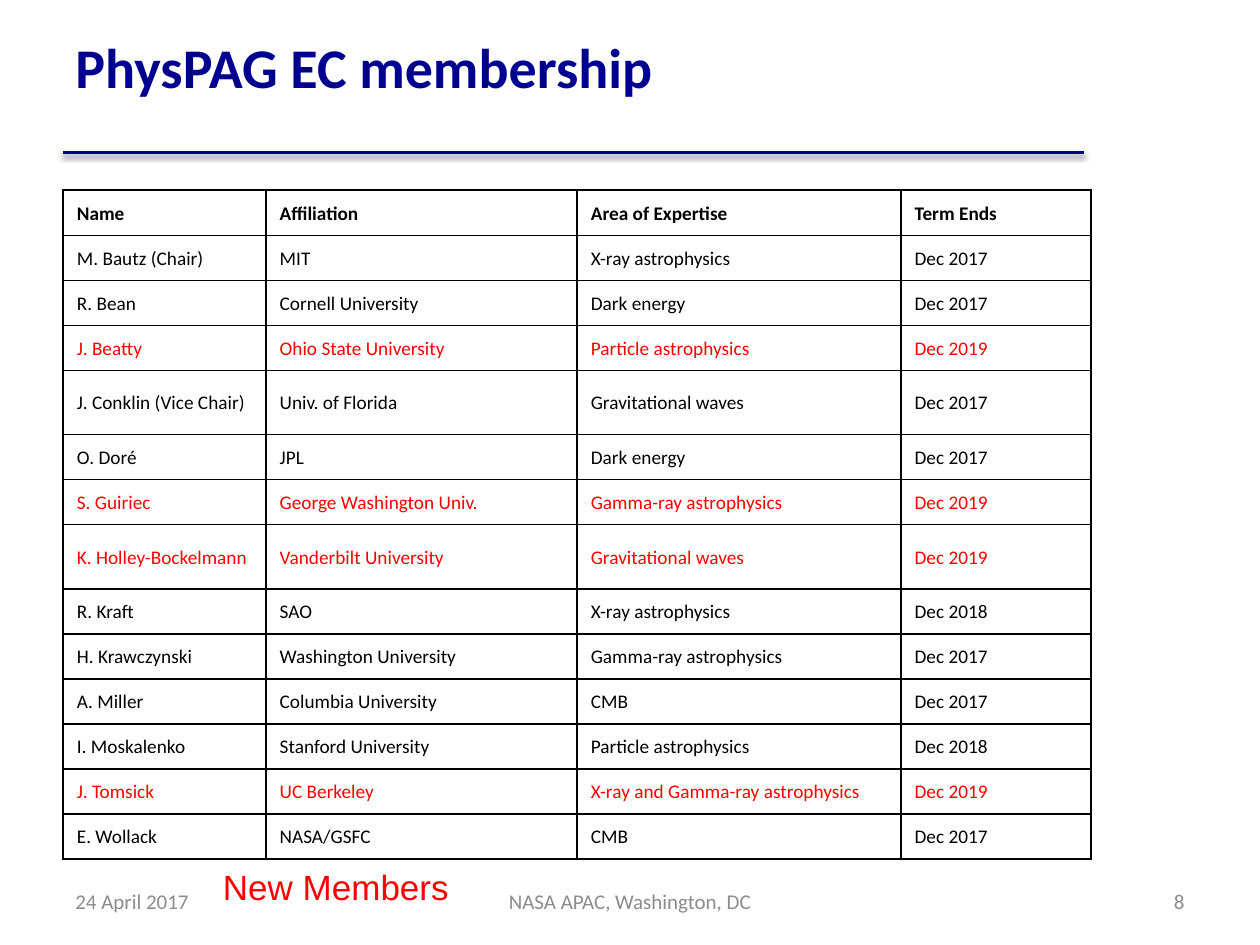
import lxml.etree
import pptx
import pptx.dml.color
import pptx.enum.shapes
import pptx.enum.text
import pptx.oxml
import pptx.oxml.ns
import pptx.util

Inches = pptx.util.Inches
Pt = pptx.util.Pt
RGBColor = pptx.dml.color.RGBColor
Align = pptx.enum.text.PP_ALIGN
Anchor = pptx.enum.text.MSO_ANCHOR

NAVY = RGBColor(0x00, 0x00, 0x90)
BLACK = RGBColor(0x00, 0x00, 0x00)
RED = RGBColor(0xFF, 0x00, 0x00)
GRAY = RGBColor(0x8C, 0x8C, 0x8C)

SLIDE_WIDTH = 10
SLIDE_HEIGHT = 7.5
MARGIN = SLIDE_WIDTH * 0.05
TABLE_TOP = 1.51
TABLE_HEIGHT = 5.31
COLUMN_WIDTHS = [1.61, 2.47, 2.57, 1.51]
TALL_ROW = 0.51
TALL_NAMES = ["J. Conklin (Vice Chair)", "K. Holley-Bockelmann"]
NEW_MEMBER_TERM = "Dec 2019"
FOOTER_TOP = 6.95
FOOTER_HEIGHT = 0.4
DRAWING = pptx.oxml.ns.nsdecls("a")

HEADER = ("Name", "Affiliation", "Area of Expertise", "Term Ends")
MEMBERS = [
    ("M. Bautz (Chair)", "MIT", "X-ray astrophysics", "Dec 2017"),
    ("R. Bean", "Cornell University", "Dark energy", "Dec 2017"),
    ("J. Beatty", "Ohio State University", "Particle astrophysics", "Dec 2019"),
    ("J. Conklin (Vice Chair)", "Univ. of Florida", "Gravitational waves", "Dec 2017"),
    ("O. Doré", "JPL", "Dark energy", "Dec 2017"),
    ("S. Guiriec", "George Washington Univ.", "Gamma-ray astrophysics", "Dec 2019"),
    ("K. Holley-Bockelmann", "Vanderbilt University", "Gravitational waves", "Dec 2019"),
    ("R. Kraft", "SAO", "X-ray astrophysics", "Dec 2018"),
    ("H. Krawczynski", "Washington University", "Gamma-ray astrophysics", "Dec 2017"),
    ("A. Miller", "Columbia University", "CMB", "Dec 2017"),
    ("I. Moskalenko", "Stanford University", "Particle astrophysics", "Dec 2018"),
    ("J. Tomsick", "UC Berkeley", "X-ray and Gamma-ray astrophysics", "Dec 2019"),
    ("E. Wollack", "NASA/GSFC", "CMB", "Dec 2017"),
]


def write_text(text_frame, text, size=12, color=BLACK, bold=False,
               font_name="Calibri", align=Align.LEFT):
    paragraph = text_frame.paragraphs[0]
    paragraph.alignment = align
    run = paragraph.add_run()
    run.text = text
    run.font.name = font_name
    run.font.size = Pt(size)
    run.font.bold = bold
    run.font.color.rgb = color
    return paragraph


def add_text_box(slide, box, text, anchor=Anchor.MIDDLE, wrap=True, **text_format):
    shape = slide.shapes.add_textbox(*map(Inches, box))
    shape.text_frame.word_wrap = wrap
    shape.text_frame.vertical_anchor = anchor
    write_text(shape.text_frame, text, **text_format)


def add_title_rule(slide, top, width):
    rule = slide.shapes.add_connector(
        pptx.enum.shapes.MSO_CONNECTOR.STRAIGHT,
        Inches(MARGIN), Inches(top), Inches(MARGIN + width), Inches(top))
    rule.line.color.rgb = NAVY
    rule.line.width = Pt(2)
    rule._element.spPr.append(pptx.oxml.parse_xml(
        f'<a:effectLst {DRAWING}><a:outerShdw blurRad="{Pt(3.1)}" '
        f'dist="{Pt(1.6)}" dir="5400000" rotWithShape="0">'
        '<a:srgbClr val="000000"><a:alpha val="38000"/></a:srgbClr>'
        '</a:outerShdw></a:effectLst>'))


def add_cell_borders(cell):
    properties = cell._tc.get_or_add_tcPr()
    for side in ("lnL", "lnR", "lnT", "lnB"):
        properties.append(pptx.oxml.parse_xml(
            f'<a:{side} {DRAWING} w="{Pt(1)}"><a:solidFill>'
            f'<a:srgbClr val="{BLACK}"/></a:solidFill></a:{side}>'))


def fill_cell(cell, text, **text_format):
    add_cell_borders(cell)
    cell.fill.background()
    cell.vertical_anchor = Anchor.MIDDLE
    cell.margin_left = cell.margin_right = cell.margin_top = Inches(0.01)
    cell.margin_bottom = 0
    paragraph = write_text(cell.text_frame, text, size=11, **text_format)
    paragraph._p.get_or_add_pPr().set("marL", str(Inches(0.1)))


def add_member_table(slide):
    rows = [HEADER, *MEMBERS]
    normal_row = (TABLE_HEIGHT - TALL_ROW * len(TALL_NAMES)) / (len(rows) - len(TALL_NAMES))
    table = slide.shapes.add_table(
        len(rows), len(COLUMN_WIDTHS), Inches(MARGIN), Inches(TABLE_TOP),
        Inches(sum(COLUMN_WIDTHS)), Inches(TABLE_HEIGHT)).table
    table.first_row = False
    table.horz_banding = False
    for column, width in zip(table.columns, COLUMN_WIDTHS):
        column.width = Inches(width)
    for row, values in zip(table.rows, rows):
        row.height = Inches(TALL_ROW if values[0] in TALL_NAMES else normal_row)
        color = RED if values[-1] == NEW_MEMBER_TERM else BLACK
        for cell, value in zip(row.cells, values):
            fill_cell(cell, value, color=color, bold=values is HEADER)


def add_footer(slide):
    side_width = SLIDE_WIDTH * 0.233
    center_width = SLIDE_WIDTH * 0.317
    footer_parts = [
        (MARGIN, side_width, "24 April 2017", Align.LEFT),
        ((SLIDE_WIDTH - center_width) / 2, center_width,
         "NASA APAC, Washington, DC", Align.CENTER),
        (SLIDE_WIDTH - MARGIN - side_width, side_width, "8", Align.RIGHT),
    ]
    for left, width, text, align in footer_parts:
        add_text_box(slide, (left, FOOTER_TOP, width, FOOTER_HEIGHT), text,
                     color=GRAY, align=align)


def main():
    presentation = pptx.Presentation()
    presentation.slide_width = Inches(SLIDE_WIDTH)
    presentation.slide_height = Inches(SLIDE_HEIGHT)
    slide = presentation.slides.add_slide(presentation.slide_layouts[6])
    add_title_rule(slide, top=1.21, width=8.1)
    add_text_box(slide, (MARGIN, -0.11, 8.35, 0.95), "PhysPAG EC membership",
                 anchor=Anchor.BOTTOM, size=32, color=NAVY, bold=True)
    add_member_table(slide)
    add_footer(slide)
    add_text_box(slide, (1.67, TABLE_TOP + TABLE_HEIGHT, 2.01, 0.44), "New Members",
                 anchor=Anchor.TOP, wrap=False, size=20, color=RED, font_name="Arial")
    presentation.save("out.pptx")


if __name__ == "__main__":
    main()
